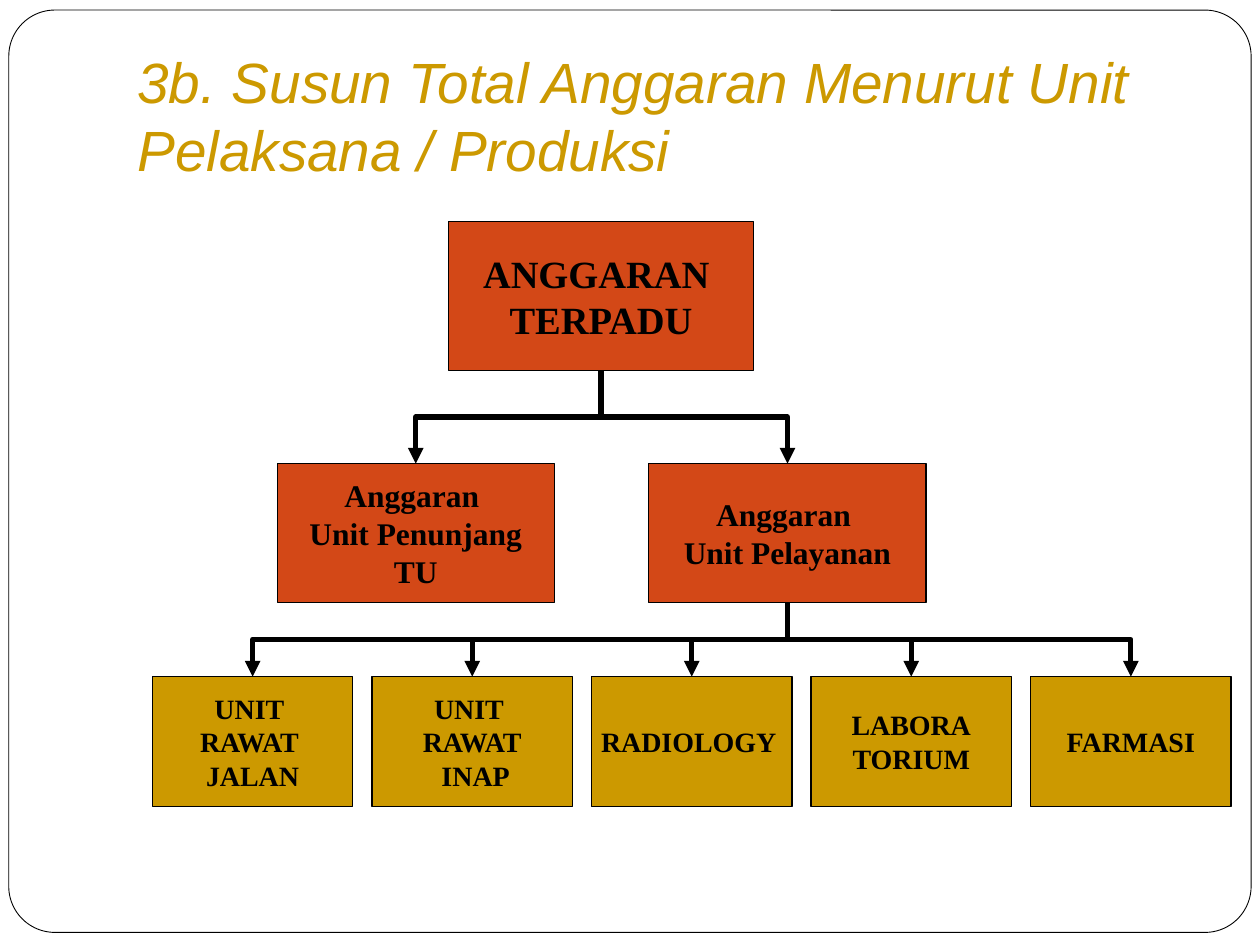
from pptx import Presentation, util as u
from pptx.dml.color import RGBColor
from pptx.enum import shapes, text
from pptx.oxml import ns
from lxml import etree

COLUMNS, ROWS = 100, 75
CELL = u.Inches(0.1)
COLORS = {"paper": "FFFFFF", "ink": "000000", "budget": "D34817", "unit": "CC9900"}
UNITS = [
    ["UNIT ", "RAWAT ", "JALAN"],
    ["UNIT ", "RAWAT", " INAP"],
    ["RADIOLOGY "],
    ["LABORA", "TORIUM"],
    ["FARMASI"],
]


def color(name):
    """Return the named palette colour."""
    return RGBColor.from_string(COLORS[name])


def place(box):
    """Convert a box in grid columns and rows to slide lengths."""
    return [round(value * CELL) for value in box]


def write(shape, lines, *, size, font="Times New Roman", ink="ink", bold=False,
          italic=False, align=text.PP_ALIGN.CENTER, anchor=text.MSO_ANCHOR.MIDDLE,
          wrap=False, bottom=0.04):
    """Fill a shape with formatted lines, one paragraph each."""
    frame = shape.text_frame
    frame.word_wrap = wrap
    frame.vertical_anchor = anchor
    frame.margin_left = frame.margin_right = u.Inches(0.09)
    frame.margin_top, frame.margin_bottom = u.Inches(0.04), u.Inches(bottom)
    frame.text = "\n".join(lines)
    for paragraph in frame.paragraphs:
        paragraph.alignment = align
        for run in paragraph.runs:
            run.font.name, run.font.size = font, u.Pt(size)
            run.font.bold, run.font.italic = bold, italic
            run.font.color.rgb = color(ink)


def add_box(slide, box, fill, line_width=0.75, kind=shapes.MSO_SHAPE.RECTANGLE):
    """Draw a filled, outlined shape."""
    shape = slide.shapes.add_shape(kind, *place(box))
    shape.shadow.inherit = False
    shape.fill.solid()
    shape.fill.fore_color.rgb = color(fill)
    shape.line.color.rgb = color("ink")
    shape.line.width = u.Pt(line_width)
    return shape


def add_node(slide, box, lines, fill, size):
    """Draw one labelled box of the chart."""
    node = add_box(slide, box, fill)
    write(node, lines, size=size, bold=True)
    return node


def add_branch(slide, parent, child):
    """Link a parent's bottom to a child's top with an elbow arrow."""
    start_x, start_y = parent.left + parent.width // 2, parent.top + parent.height
    end_x, end_y = child.left + child.width // 2, child.top
    connector = slide.shapes.add_connector(
        shapes.MSO_CONNECTOR.ELBOW, start_x, start_y, end_x, end_y)
    connector.begin_connect(parent, 2)
    connector.end_connect(child, 0)
    rightward = end_x > start_x
    connector.width, connector.height = end_y - start_y, abs(end_x - start_x)
    connector.left = (start_x + end_x - connector.width) // 2
    connector.top = (start_y + end_y - connector.height) // 2
    properties = connector._element.spPr
    transform = properties.find(ns.qn("a:xfrm"))
    transform.set("rot", str((270 if rightward else 90) * 60000))
    transform.set("flipH", str(int(rightward)))
    connector.line.color.rgb = color("ink")
    connector.line.width = u.Pt(3)
    etree.SubElement(connector.line._get_or_add_ln(), ns.qn("a:tailEnd"), type="triangle")
    etree.SubElement(properties, ns.qn("a:effectLst"))


def add_frame(slide, box):
    """Draw the rounded slide border."""
    frame = add_box(slide, box, "paper", 0.5, shapes.MSO_SHAPE.ROUNDED_RECTANGLE)
    frame.adjustments[0] = 0.05


def add_title(slide, box):
    """Write the slide title."""
    title = slide.shapes.add_textbox(*place(box))
    write(title, ["3b. Susun Total Anggaran Menurut Unit Pelaksana / Produksi"],
          size=32.4, font="Arial", ink="unit", italic=True, wrap=True, bottom=0.1,
          align=text.PP_ALIGN.LEFT, anchor=text.MSO_ANCHOR.BOTTOM)


def add_budget_tree(slide, box):
    """Draw the three-level budget tree within a box."""
    left, top, width, height = box
    root = add_node(slide, (left + 23.5, top, 24.2, 11.8),
                    ["ANGGARAN ", "TERPADU"], "budget", 22)
    support, service = [
        add_node(slide, (left + offset, top + 19.2, 22, 11), lines, "budget", 18)
        for offset, lines in (
            (9.9, ["Anggaran ", "Unit Penunjang", "TU"]),
            (39.4, ["Anggaran ", "Unit Pelayanan"]),
        )
    ]
    unit_width, unit_height = 15.9, 10.3
    pitch = (width - unit_width) / (len(UNITS) - 1)
    units = [
        add_node(slide, (left + index * pitch, top + height - unit_height,
                         unit_width, unit_height), lines, "unit", 16)
        for index, lines in enumerate(UNITS)
    ]
    for parent, children in ((root, [support, service]), (service, units)):
        for child in children:
            add_branch(slide, parent, child)


def main():
    """Build and save the presentation."""
    presentation = Presentation()
    presentation.slide_width, presentation.slide_height = COLUMNS * CELL, ROWS * CELL
    slide = presentation.slides.add_slide(presentation.slide_layouts[6])
    add_frame(slide, (0.7, 0.8, 98.6, 73.2))
    add_title(slide, (10, 3, 85, 12.5))
    add_budget_tree(slide, (12.1, 17.6, 85.6, 46.4))
    presentation.save("out.pptx")


if __name__ == "__main__":
    main()
